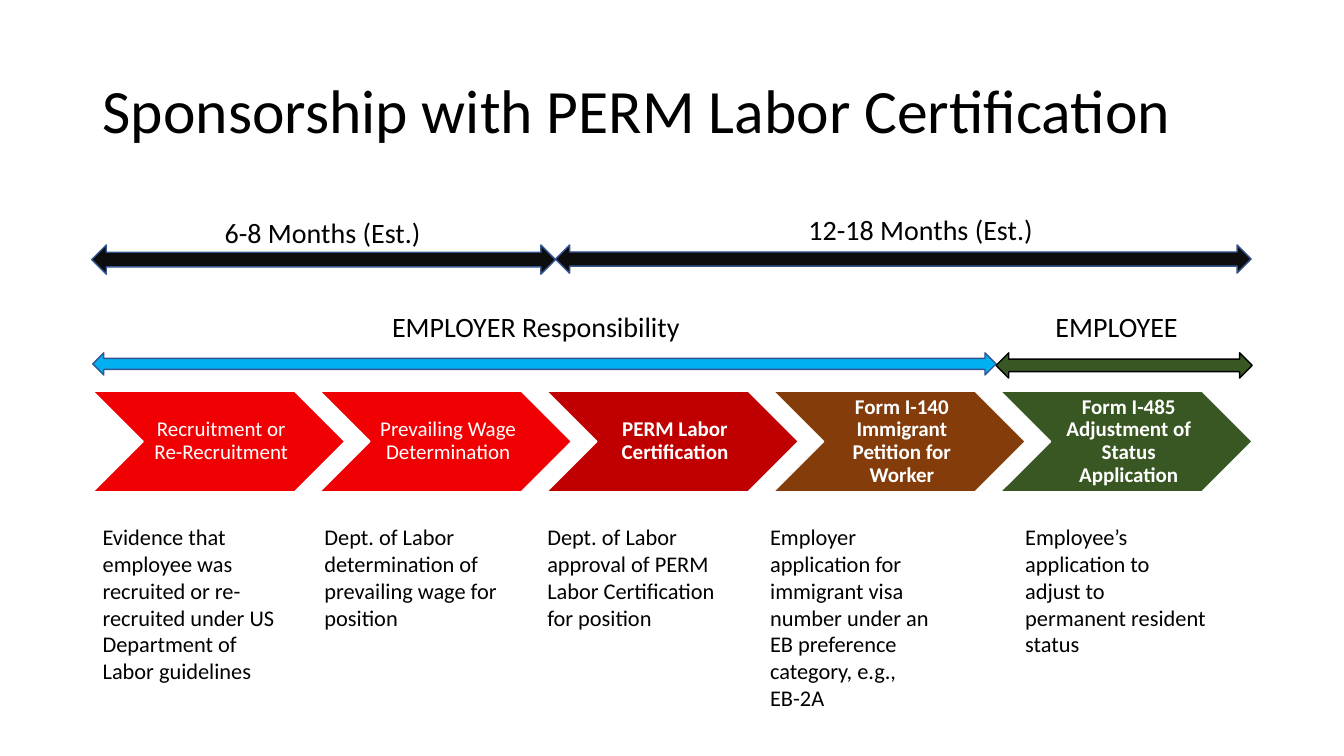
from dataclasses import dataclass

from pptx import Presentation
from pptx.dml.color import RGBColor
from pptx.enum.shapes import MSO_SHAPE
from pptx.enum.text import MSO_ANCHOR, MSO_AUTO_SIZE, PP_ALIGN
from pptx.util import Inches, Pt


@dataclass(frozen=True)
class Theme:
    font: str = "Calibri"
    text: str = "000000"
    white: str = "FFFFFF"
    red: str = "F10003"
    dark_red: str = "C00000"
    brown: str = "843C0B"
    green: str = "385723"
    sky: str = "00B0F0"
    black: str = "0D0D0D"
    navy: str = "325491"
    title_size: int = 44
    label_size: int = 20
    note_size: int = 16
    step_size: int = 15


THEME = Theme()


def write_text(frame, text, *, size, color=THEME.text, bold=False,
               align=PP_ALIGN.LEFT, anchor=MSO_ANCHOR.TOP, spacing=1.0,
               wrap=True, grow=False):
    frame.word_wrap = wrap
    frame.auto_size = MSO_AUTO_SIZE.SHAPE_TO_FIT_TEXT if grow else MSO_AUTO_SIZE.NONE
    frame.vertical_anchor = anchor
    paragraph = frame.paragraphs[0]
    paragraph.alignment = align
    paragraph.line_spacing = spacing
    run = paragraph.add_run()
    run.text = text
    run.font.name = THEME.font
    run.font.size = Pt(size)
    run.font.bold = bold
    run.font.color.rgb = RGBColor.from_string(color)


class SlideBuilder:
    def __init__(self, slide, theme):
        self.slide = slide
        self.theme = theme

    def text(self, content, left, top, width, height, **style):
        box = self.slide.shapes.add_textbox(
            Inches(left), Inches(top), Inches(width), Inches(height))
        write_text(box.text_frame, content, **style)

    def shape(self, kind, left, top, width, height, fill, line):
        shape = self.slide.shapes.add_shape(
            kind, Inches(left), Inches(top), Inches(width), Inches(height))
        shape.shadow.inherit = False
        shape.fill.solid()
        shape.fill.fore_color.rgb = RGBColor.from_string(fill)
        shape.line.color.rgb = RGBColor.from_string(line)
        shape.line.width = Pt(1)
        return shape

    def title(self, content):
        self.text(content, 0.92, 0.4, 11.5, 1.45, size=self.theme.title_size,
                  anchor=MSO_ANCHOR.MIDDLE, spacing=0.9)

    def step(self, content, left, fill, bold):
        chevron = self.shape(MSO_SHAPE.CHEVRON, left, 3.88, 2.5, 1,
                             fill, self.theme.white)
        frame = chevron.text_frame
        frame.margin_left = Inches(0.07)
        frame.margin_top = frame.margin_right = frame.margin_bottom = Inches(0.02)
        write_text(frame, content, size=self.theme.step_size,
                   color=self.theme.white, bold=bold, align=PP_ALIGN.CENTER,
                   anchor=MSO_ANCHOR.MIDDLE, spacing=0.9)

    def note(self, content, left, height):
        self.text(content, left, 5.14, 2.03, height,
                  size=self.theme.note_size, grow=True)

    def span(self, arrow_box, fill, line, label, label_box):
        """Add a double-headed arrow with its one-line label."""
        self.shape(MSO_SHAPE.LEFT_RIGHT_ARROW, *arrow_box, fill, line)
        self.text(label, *label_box, 0.44, size=self.theme.label_size,
                  wrap=False, grow=True)


# Step, chevron colour, bold, note, note left, note height
STEPS = [
    ("Recruitment or Re-Recruitment", THEME.red, False,
     "Evidence that employee was recruited or re-recruited under US "
     "Department of Labor guidelines", 0.92, 1.72),
    ("Prevailing Wage Determination", THEME.red, False,
     "Dept. of Labor determination of prevailing wage for position", 3.12, 1.18),
    ("PERM Labor Certification", THEME.dark_red, True,
     "Dept. of Labor approval of PERM Labor Certification for position", 5.33, 1.18),
    ("Form I-140 Immigrant Petition for Worker", THEME.brown, True,
     "Employer application for immigrant visa number under an EB preference "
     "category, e.g., EB-2A", 7.54, 1.99),
    ("Form I-485 Adjustment of Status Application", THEME.green, True,
     "Employee’s application to adjust to permanent resident status", 10.07, 1.45),
]

# Arrow box, fill, line, label, label left/top/width
SPANS = [
    ((0.92, 3.5, 8.96, 0.22), THEME.sky, THEME.navy,
     "EMPLOYER Responsibility", (3.79, 3.02, 3.08)),
    ((9.88, 3.5, 2.54, 0.25), THEME.green, THEME.text,
     "EMPLOYEE", (10.37, 3.02, 1.42)),
    ((5.51, 2.43, 6.9, 0.28), THEME.black, THEME.navy,
     "12-18 Months (Est.)", (7.92, 2.06, 2.45)),
    ((0.91, 2.43, 4.6, 0.29), THEME.black, THEME.navy,
     "6-8 Months (Est.)", (2.13, 2.09, 2.16)),
]


def main():
    presentation = Presentation()
    presentation.slide_width = Inches(13.33)
    presentation.slide_height = Inches(7.5)
    slide = presentation.slides.add_slide(presentation.slide_layouts[6])
    builder = SlideBuilder(slide, THEME)

    builder.title("Sponsorship with PERM Labor Certification")
    for index, (step, fill, bold, note, note_left, note_height) in enumerate(STEPS):
        builder.step(step, 0.92 + 2.25 * index, fill, bold)
        builder.note(note, note_left, note_height)
    for span in SPANS:
        builder.span(*span)

    presentation.save("out.pptx")


if __name__ == "__main__":
    main()
